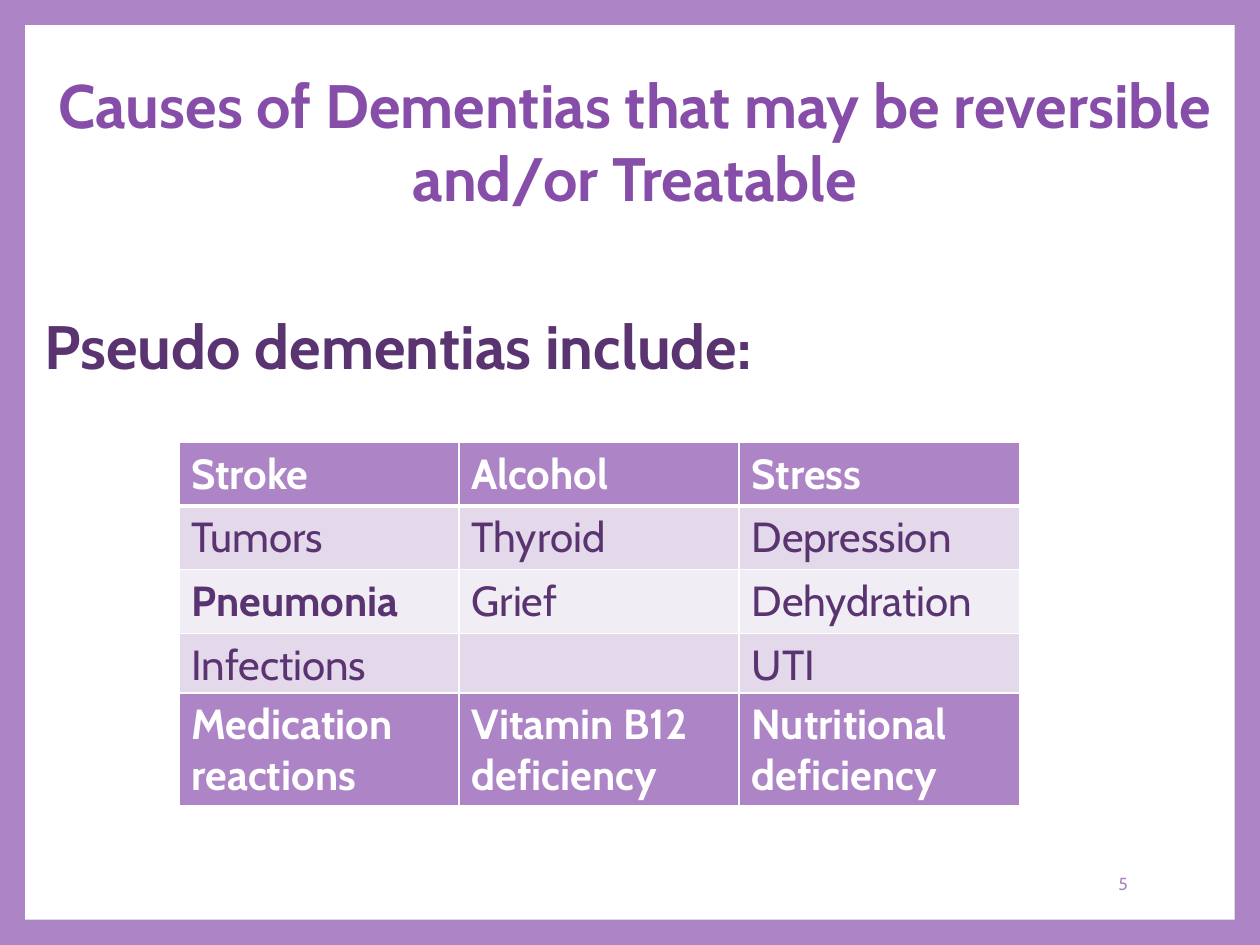
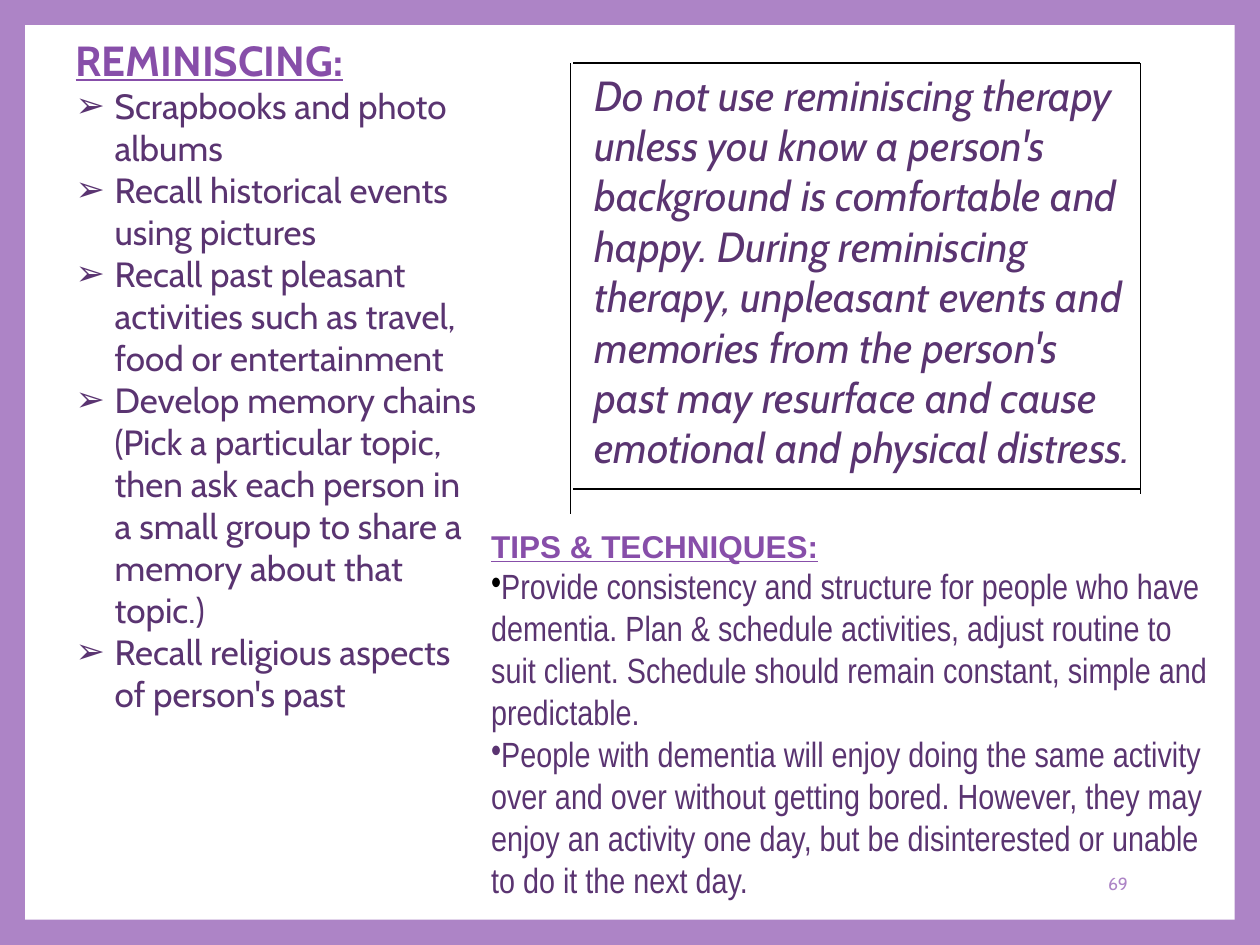
from lxml.etree import SubElement
from pptx import Presentation
from pptx.dml.color import RGBColor
from pptx.enum.shapes import MSO_CONNECTOR, MSO_SHAPE
from pptx.enum.text import MSO_ANCHOR, MSO_AUTO_SIZE, PP_ALIGN
from pptx.oxml.ns import qn
from pptx.util import Inches, Pt

LILAC, PURPLE, PLUM = "AD84C6", "874EA9", "5A3471"
WHITE, BLACK = "FFFFFF", "000000"
PALE, FAINT = "E3D9EA", "F1EDF5"


def tint(code):
    return RGBColor.from_string(code)


def look(size, hue, name="Cabin", **more):
    return {"size": Pt(size), "hue": hue, "name": name,
            "bold": False, "italic": False, "underline": False, **more}


HEAD = look(35, PURPLE, bold=True)
LEAD = look(35, PLUM, bold=True)
LABEL = look(24, PURPLE, bold=True, underline=True)
LIST = look(20, PLUM)
QUOTE = look(24, PLUM, italic=True)
TIPS = look(18, PURPLE, "Arial", bold=True, underline=True)
TIP = look(20, PLUM, "Arial Narrow")
PAGE = look(10, LILAC)
BAND = look(24, WHITE, bold=True)
CELL = look(24, PLUM)
STRONG = look(24, PLUM, bold=True)


class Deck:
    def __init__(self):
        self.prs = Presentation()
        self.prs.slide_width, self.prs.slide_height = Inches(10), Inches(7.5)
        back = self.prs.slide_master.background.fill
        back.solid()
        back.fore_color.rgb = tint(LILAC)

    def start(self, page):
        self.slide = self.prs.slides.add_slide(self.prs.slide_layouts[1])
        self.shapes = self.slide.shapes
        panel = self.shapes.add_shape(MSO_SHAPE.RECTANGLE, *map(Inches, (0.2, 0.2, 9.6, 7.1)))
        panel.shadow.inherit = False
        panel.fill.solid()
        panel.fill.fore_color.rgb = tint(WHITE)
        panel.line.fill.background()
        tree = panel.element.getparent()
        tree.insert(2, panel.element)
        self.text((7.65, 6.81, 1.4, 0.4), [page], PAGE, PP_ALIGN.RIGHT, MSO_ANCHOR.MIDDLE)

    def style(self, para, form, align=PP_ALIGN.LEFT):
        para.alignment = align
        para.space_before = Pt(0)
        for key, value in form.items():
            if key == "hue":
                para.font.color.rgb = tint(value)
                for run in para.runs:
                    run.font.color.rgb = tint(value)
            else:
                for font in [para.font] + [run.font for run in para.runs]:
                    setattr(font, key, value)

    def bullet(self, para, mark=None, hue=PLUM, hang=0, face="Arial"):
        props = para._p.get_or_add_pPr()
        props.set("marL", str(Inches(hang)))
        props.set("indent", str(-Inches(hang)))
        if mark is None:
            SubElement(props, qn("a:buNone"))
            return
        color = SubElement(props, qn("a:buClr"))
        SubElement(color, qn("a:srgbClr"), val=hue)
        SubElement(props, qn("a:buFont"), typeface=face)
        SubElement(props, qn("a:buChar"), char=mark)

    def fill(self, shape, box, lines, form, align=PP_ALIGN.LEFT, anchor=MSO_ANCHOR.TOP):
        shape.left, shape.top, shape.width, shape.height = map(Inches, box)
        frame = shape.text_frame
        frame.word_wrap = True
        frame.auto_size = MSO_AUTO_SIZE.NONE
        frame.vertical_anchor = anchor
        frame.text = "\n".join(lines)
        for para in frame.paragraphs:
            self.style(para, form, align)
        return frame.paragraphs

    def title(self, box, words, form, align=PP_ALIGN.LEFT):
        self.fill(self.shapes.title, box, [words], form, align)

    def body(self, box, lines, form, mark=None, hang=0):
        for para in self.fill(self.slide.placeholders[1], box, lines, form):
            self.bullet(para, mark, hang=hang)

    def text(self, box, lines, form, align=PP_ALIGN.LEFT, anchor=MSO_ANCHOR.TOP):
        shape = self.shapes.add_textbox(*map(Inches, box))
        return self.fill(shape, box, lines, form, align, anchor)

    def line(self, *ends):
        rule = self.shapes.add_connector(MSO_CONNECTOR.STRAIGHT, *map(Inches, ends))
        rule.line.color.rgb = tint(BLACK)
        rule.line.width = Pt(0.79)
        SubElement(rule.element.spPr, qn("a:effectLst"))

    def edge(self, cell, base):
        props = cell._tc.get_or_add_tcPr()
        for side, width in zip("LRTB", (1, 1, 1, base)):
            rim = SubElement(props, qn(f"a:ln{side}"), w=str(Pt(width)))
            paint = SubElement(rim, qn("a:solidFill"))
            SubElement(paint, qn("a:srgbClr"), val=WHITE)

    def table(self, box, rows, fills):
        grid = self.shapes.add_table(len(rows), len(rows[0]), *map(Inches, box)).table
        grid.first_row = grid.horz_banding = False
        for r, (row, hue) in enumerate(zip(rows, fills)):
            for c, words in enumerate(row):
                cell = grid.cell(r, c)
                cell.text = words
                self.edge(cell, 3 if hue == LILAC else 1)
                cell.fill.solid()
                cell.fill.fore_color.rgb = tint(hue)
                form = BAND if hue == LILAC else STRONG if words == "Pneumonia" else CELL
                self.style(cell.text_frame.paragraphs[0], form)


def causes(deck):
    deck.start("5")
    deck.title((0.25, 0.48, 9.58, 1.3),
               "Causes of Dementias that may be reversible and/or Treatable",
               HEAD, PP_ALIGN.CENTER)
    deck.body((0.25, 2.4, 9.58, 0.75), ["Pseudo dementias include:"], LEAD)
    deck.table((1.42, 3.51, 6.67, 2),
               [("Stroke", "Alcohol", "Stress"),
                ("Tumors", "Thyroid", "Depression"),
                ("Pneumonia", "Grief", "Dehydration"),
                ("Infections", "", "UTI")],
               (LILAC, PALE, FAINT, PALE))
    deck.table((1.42, 5.5, 6.67, 0.9),
               [("Medication reactions", "Vitamin B12 deficiency", "Nutritional deficiency")],
               (LILAC,))


def recall(deck):
    deck.start("69")
    deck.title((0.5, 0.22, 3.42, 0.5), "REMINISCING:", LABEL)
    deck.body((0.5, 0.62, 3.42, 5.46),
              ["Scrapbooks and photo albums",
               "Recall historical events using pictures",
               "Recall past pleasant activities such as travel, food or entertainment",
               "Develop memory chains (Pick a particular topic, then ask each person "
               "in a small group to share a memory about that topic.)",
               "Recall religious aspects of person's past"],
              LIST, "➢", 0.31)
    deck.text((4.62, 0.5, 4.5, 3.4),
              ["Do not use reminiscing therapy unless you know a person's background is "
               "comfortable and happy. During reminiscing therapy, unpleasant events and "
               "memories from the person's past may resurface and cause emotional and "
               "physical distress."], QUOTE)
    head, *tips = deck.text(
        (3.8, 4.13, 6, 3.1),
        ["TIPS & TECHNIQUES:",
         "Provide consistency and structure for people who have dementia. Plan & schedule "
         "activities, adjust routine to suit client. Schedule should remain constant, "
         "simple and predictable.",
         "People with dementia will enjoy doing the same activity over and over without "
         "getting bored. However, they may enjoy an activity one day, but be "
         "disinterested or unable to do it the next day."], TIP)
    deck.style(head, TIPS)
    for tip, hue in zip(tips, (BLACK, PLUM)):
        deck.bullet(tip, "•", hue, face="Arial Narrow")
    for ends in ((4.55, 0.5, 9.05, 0.5), (9.05, 0.5, 9.05, 3.92),
                 (9.05, 3.88, 4.55, 3.88), (4.53, 0.5, 4.53, 4.08)):
        deck.line(*ends)


def main():
    deck = Deck()
    causes(deck)
    recall(deck)
    deck.prs.save("out.pptx")


if __name__ == "__main__":
    main()
